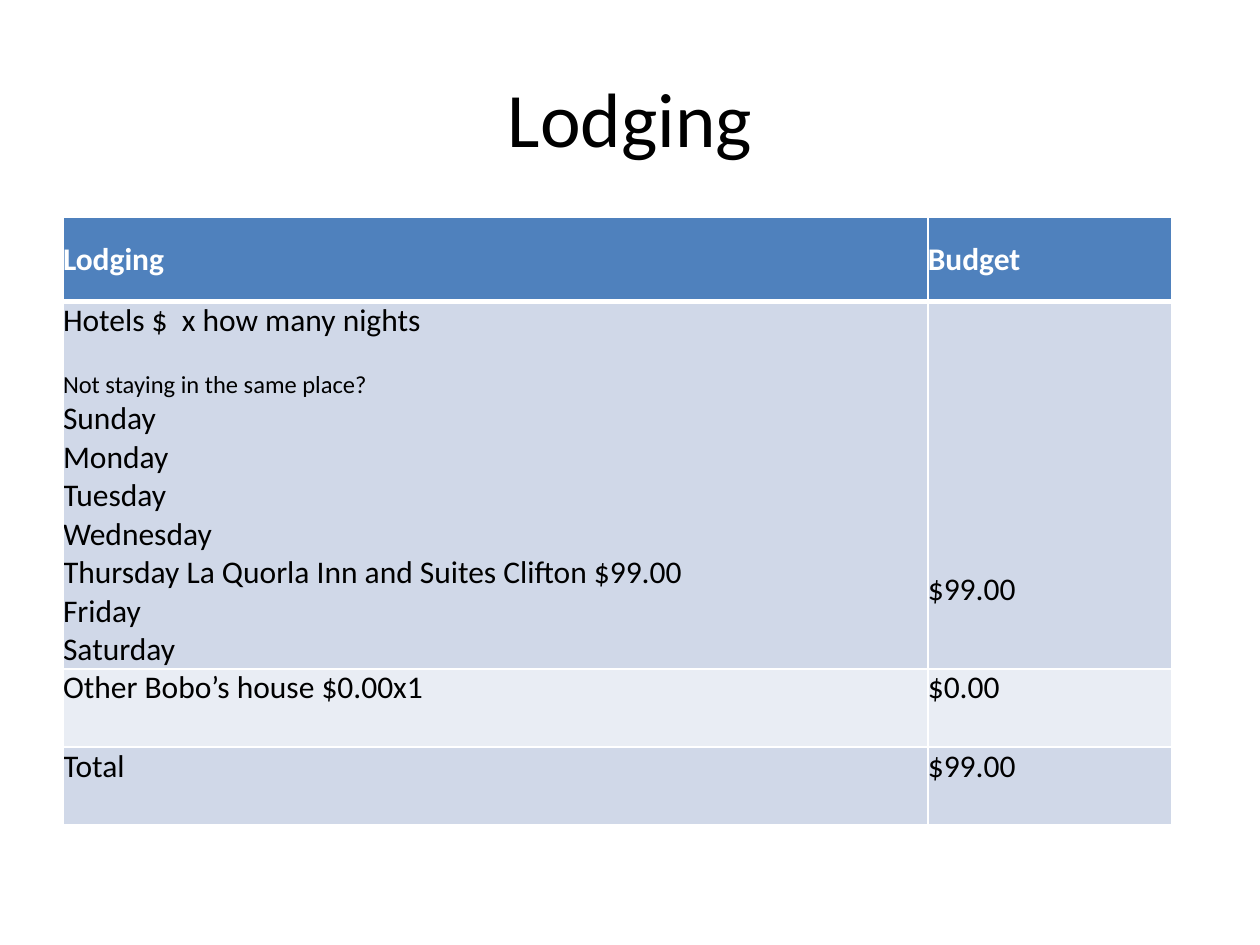
from dataclasses import dataclass

from lxml.etree import SubElement
from pptx import Presentation
from pptx.dml.color import RGBColor
from pptx.enum.text import MSO_ANCHOR, PP_ALIGN
from pptx.oxml.ns import qn
from pptx.util import Inches, Pt

WIDTH, HEIGHT = 10, 7.5
WHITE, BLACK = "FFFFFF", "000000"
HEADER, BAND, LIGHT_BAND = "4F81BD", "D0D8E8", "E9EDF4"


def rgb(color):
    return RGBColor.from_string(color)


def write(p, text, size=18, color=BLACK, bold=False, font="Calibri",
          align=PP_ALIGN.LEFT, before=0):
    p.alignment = align
    p.space_before = Pt(before)
    r = p.add_run()
    r.text = text
    r.font.name = font
    r.font.size = Pt(size)
    r.font.bold = bold
    r.font.color.rgb = rgb(color)


def set_borders(cell, color, **widths):
    """Widths in points for L, R, T and B; lines must come before the fill."""
    tc_pr = cell._tc.get_or_add_tcPr()
    for i, side in enumerate("LRTB"):
        ln = SubElement(tc_pr, qn(f"a:ln{side}"), w=str(Pt(widths.get(side, 1))))
        fill = SubElement(ln, qn("a:solidFill"))
        SubElement(fill, qn("a:srgbClr"), val=color)
        tc_pr.insert(i, ln)


@dataclass
class SlideBuilder:
    """Places elements on a slide by shares of its width and height."""
    s: object
    border: str = WHITE

    def box(self, left, top, width, height):
        return (Inches(left * WIDTH), Inches(top * HEIGHT),
                Inches(width * WIDTH), Inches(height * HEIGHT))

    def title(self, text, *share):
        sp = self.s.shapes.title
        sp.left, sp.top, sp.width, sp.height = self.box(*share)
        tf = sp.text_frame
        tf.vertical_anchor = MSO_ANCHOR.MIDDLE
        write(tf.paragraphs[0], text, size=44, align=PP_ALIGN.CENTER)

    def table(self, rows, columns, heights, *share):
        """Columns are shares of the table's width, heights are inches."""
        box = self.box(*share)
        table = self.s.shapes.add_table(len(rows), len(columns), *box).table
        for column, part in zip(table.columns, columns):
            column.width = int(box[2] * part)
        for i, (row, height) in enumerate(zip(rows, heights)):
            table.rows[i].height = Inches(height)
            for j, lines in enumerate(row):
                self.cell(table.cell(i, j), lines, i)
        return table

    def cell(self, cell, lines, row):
        header = row == 0
        cell.margin_left = cell.margin_right = 0
        cell.margin_top = cell.margin_bottom = 0
        cell.vertical_anchor = MSO_ANCHOR.MIDDLE if header else MSO_ANCHOR.TOP
        cell.fill.solid()
        cell.fill.fore_color.rgb = rgb(
            HEADER if header else BAND if row % 2 else LIGHT_BAND)
        set_borders(cell, self.border, T=3 if row == 1 else 1,
                    B=3 if header else 1)
        style = {"color": WHITE, "bold": True} if header else {}
        tf = cell.text_frame
        for i, (text, extra) in enumerate(lines):
            p = tf.add_paragraph() if i else tf.paragraphs[0]
            write(p, text, **style, **extra)


def plain(*texts):
    return [(text, {}) for text in texts]


def main():
    prs = Presentation()
    prs.slide_width, prs.slide_height = Inches(WIDTH), Inches(HEIGHT)
    slide = SlideBuilder(prs.slides.add_slide(prs.slide_layouts[5]))
    slide.title("Lodging", 0.05, 0.04, 0.9, 1 / 6)

    hotels = [
        *plain("Hotels $  x how many nights"),
        ("Not staying in the same place?", {"size": 14, "before": 17}),
        *plain("Sunday", "Monday", "Tuesday", "Wednesday",
               "Thursday La Quorla Inn and Suites Clifton $99.00",
               "Friday", "Saturday"),
    ]
    rows = [
        (plain("Lodging"), plain("Budget")),
        (hotels, plain("$99.00")),
        (plain("Other Bobo’s house $0.00x1"), plain("$0.00")),
        (plain("Total"), plain("$99.00")),
    ]
    table = slide.table(rows, (0.78, 0.22), (0.67, 2.9, 0.62, 0.62),
                        0.05, 0.23, 0.88, 0.64)
    # Lowers the amount to the Thursday line
    table.cell(1, 1).margin_top = Inches(2.13)
    prs.save("out.pptx")


if __name__ == "__main__":
    main()
